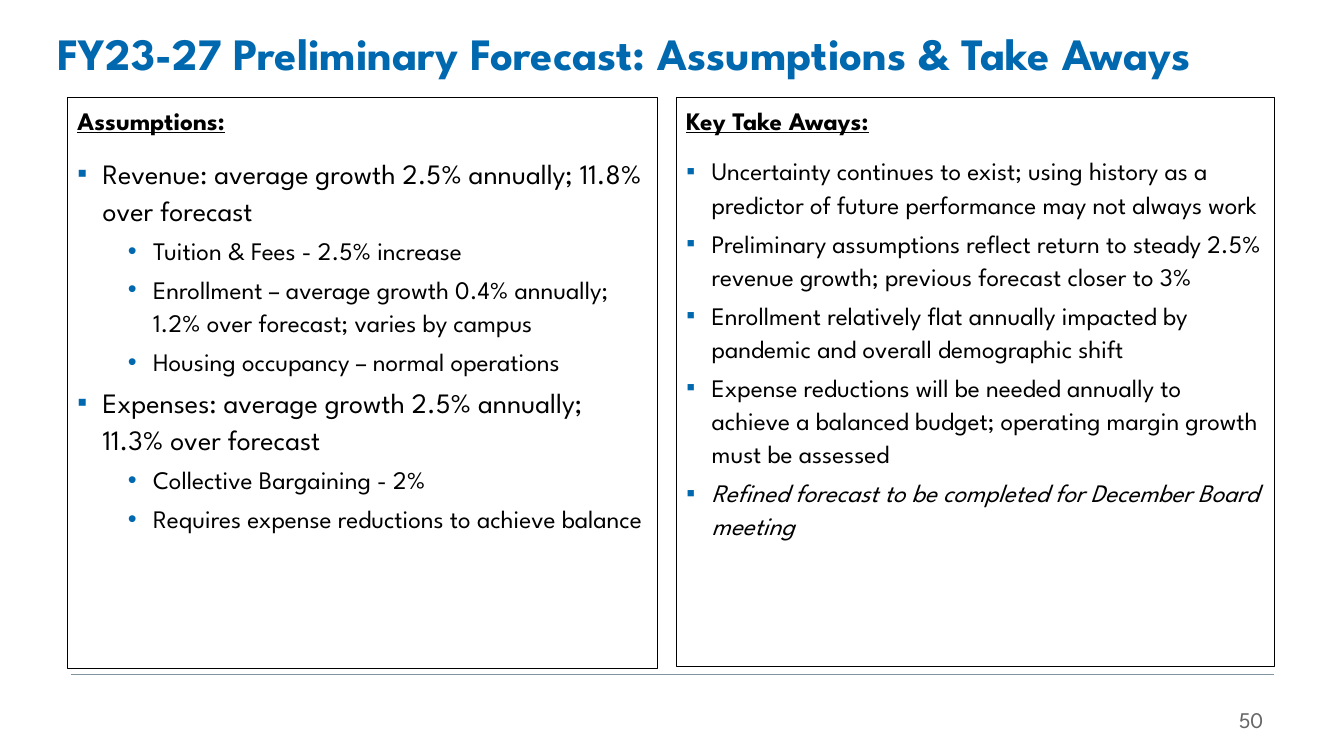
"""Build the preliminary forecast slide with assumptions and take aways."""
from dataclasses import dataclass

from lxml import etree
from pptx import Presentation
from pptx import util as u
from pptx.dml.color import RGBColor
from pptx.enum import shapes, text
from pptx.oxml import ns

BLUE = RGBColor(0x00, 0x68, 0xAE)
BLACK = RGBColor(0x00, 0x00, 0x00)
GRAY = RGBColor(0x66, 0x66, 0x66)
RULE = RGBColor(0x7F, 0x94, 0x9F)
FONT = "League Spartan"
MARKS = ("▪", "•")


@dataclass(frozen=True)
class Point:
    """One bulleted statement."""
    words: str
    level: int = 0
    size: int = 18
    italic: bool = False


@dataclass(frozen=True)
class Panel:
    """A bordered column with a heading and points."""
    left: float
    width: float
    height: float
    heading: str
    points: tuple[Point, ...]


PANELS = (
    Panel(6.71, 5.93, 5.64, "Key Take Aways:", (
        Point("Uncertainty continues to exist; using history as a predictor of "
              "future performance may not always work"),
        Point("Preliminary assumptions reflect return to steady 2.5% revenue growth; "
              "previous forecast closer to 3%"),
        Point("Enrollment relatively flat annually impacted by pandemic and overall "
              "demographic shift"),
        Point("Expense reductions will be needed annually to achieve a balanced budget; "
              "operating margin growth must be assessed"),
        Point("Refined forecast to be completed for December Board meeting", italic=True),
    )),
    Panel(0.67, 5.85, 5.66, "Assumptions:", (
        Point("Revenue: average growth 2.5% annually; 11.8% over forecast", size=20),
        Point("Tuition & Fees - 2.5% increase", 1),
        Point("Enrollment – average growth 0.4% annually; 1.2% over forecast; "
              "varies by campus", 1),
        Point("Housing occupancy – normal operations", 1),
        Point("Expenses: average growth 2.5% annually; 11.3% over forecast", size=20),
        Point("Collective Bargaining - 2%", 1),
        Point("Requires expense reductions to achieve balance", 1),
    )),
)


def write(para, words: str, *, size: float, color: RGBColor = BLACK, bold: bool = False,
          italic: bool = False, underline: bool = False, spacing: float = 1.0,
          after: float = 0, align=text.PP_ALIGN.LEFT) -> None:
    """Fill a paragraph with one formatted span."""
    para.alignment = align
    para.line_spacing = spacing
    para.space_after = u.Pt(after)
    span = para.add_run()
    span.text = words
    font = span.font
    font.name, font.size = FONT, u.Pt(size)
    font.bold, font.italic, font.underline = bold, italic, underline
    font.color.rgb = color


def add_bullet(para, level: int) -> None:
    """Give a paragraph its blue bullet and hanging indent."""
    para.level = level
    properties = para._p.get_or_add_pPr()
    properties.set("marL", str(u.Inches(0.25 + 0.5 * level)))
    properties.set("indent", str(u.Inches(-0.25)))
    color = etree.SubElement(properties, ns.qn("a:buClr"))
    etree.SubElement(color, ns.qn("a:srgbClr"), val=str(BLUE))
    etree.SubElement(properties, ns.qn("a:buFont"), typeface="Arial")
    etree.SubElement(properties, ns.qn("a:buChar"), char=MARKS[level])


def add_panel(page, panel: Panel) -> None:
    """Draw a bordered column of text."""
    box = page.shapes.add_shape(
        shapes.MSO_SHAPE.RECTANGLE, u.Inches(panel.left), u.Inches(0.97),
        u.Inches(panel.width), u.Inches(panel.height))
    box.shadow.inherit = False
    box.fill.background()
    box.line.color.rgb = BLACK
    box.line.width = u.Pt(0.75)
    frame = box.text_frame
    frame.word_wrap = True
    frame.vertical_anchor = text.MSO_ANCHOR.TOP
    write(frame.paragraphs[0], panel.heading, size=18, bold=True, underline=True,
          spacing=1.1, after=12)
    for point in panel.points:
        para = frame.add_paragraph()
        add_bullet(para, point.level)
        write(para, point.words, size=point.size, italic=point.italic,
              spacing=1.1, after=4)


def add_label(page, words: str, left: float, top: float, width: float, height: float,
              **style) -> None:
    """Place a vertically centred line of text."""
    box = page.shapes.add_textbox(*map(u.Inches, (left, top, width, height)))
    frame = box.text_frame
    frame.word_wrap = True
    frame.vertical_anchor = text.MSO_ANCHOR.MIDDLE
    write(frame.paragraphs[0], words, **style)


def add_rule(page) -> None:
    """Draw the thin footer line."""
    rule = page.shapes.add_connector(
        shapes.MSO_CONNECTOR.STRAIGHT, u.Inches(0.7), u.Inches(6.69),
        u.Inches(12.64), u.Inches(6.69))
    rule.line.color.rgb = RULE
    rule.line.width = u.Pt(0.5)
    etree.SubElement(rule._element.spPr, ns.qn("a:effectLst"))


def main() -> None:
    """Assemble and save the deck."""
    deck = Presentation()
    deck.slide_width, deck.slide_height = u.Inches(13.33), u.Inches(7.5)
    page = deck.slides.add_slide(deck.slide_layouts[6])
    add_rule(page)
    add_label(page, "FY23-27 Preliminary Forecast: Assumptions & Take Aways",
              0.47, 0.14, 12.47, 0.83, size=32, color=BLUE, bold=True, spacing=0.9)
    for panel in PANELS:
        add_panel(page, panel)
    add_label(page, "50", 11.63, 7, 1, 0.28, size=16, color=GRAY,
              align=text.PP_ALIGN.RIGHT)
    deck.save("out.pptx")


if __name__ == "__main__":
    main()
